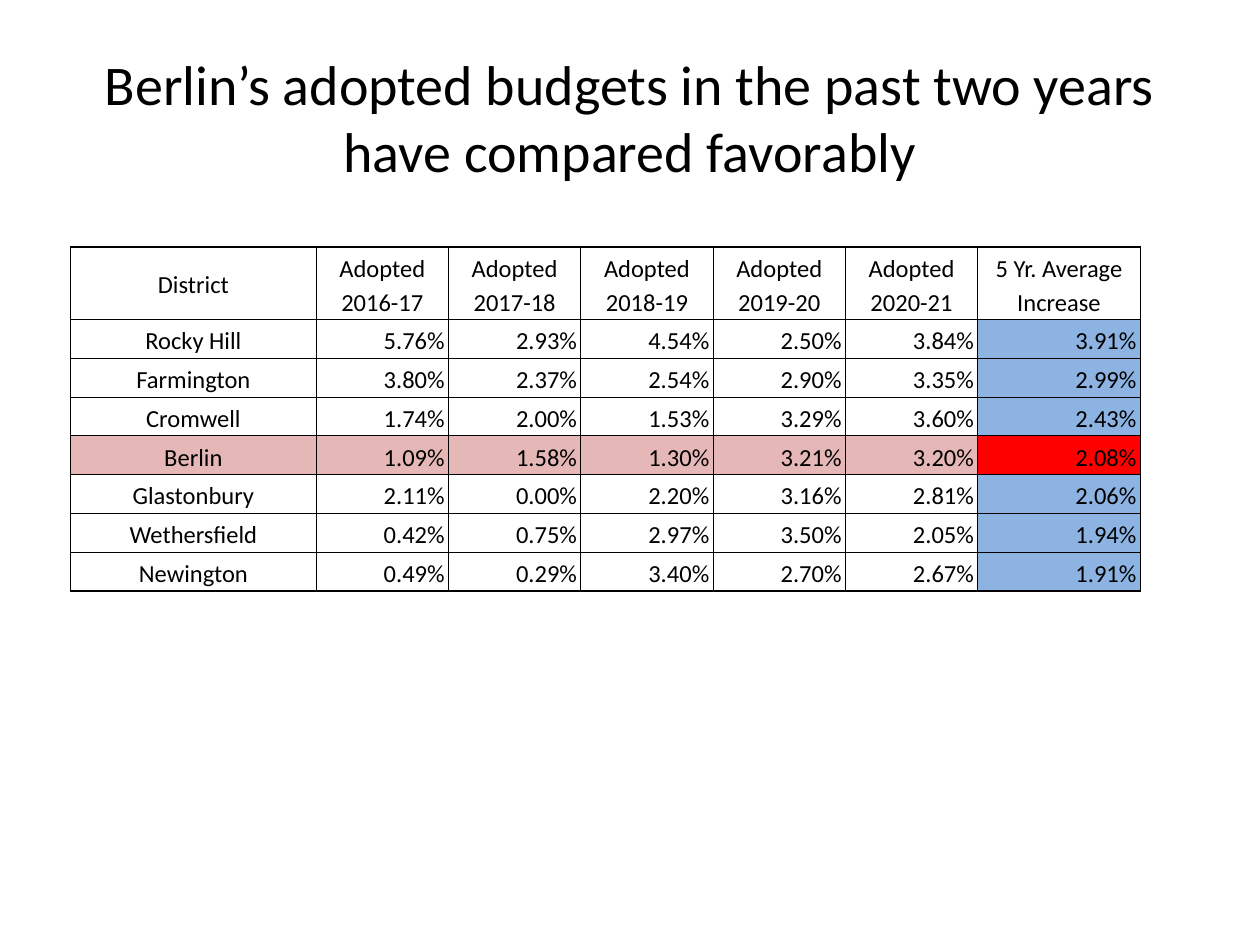
from dataclasses import dataclass
from typing import NamedTuple

from lxml.etree import SubElement
from pptx import Presentation
from pptx.dml.color import RGBColor
from pptx.enum.text import MSO_ANCHOR as Anchor, PP_ALIGN as Align
from pptx.oxml.ns import qn
from pptx.util import Inches, Pt


@dataclass(frozen=True)
class Theme:
    font: str = "Calibri"
    title_size: int = 32
    table_size: int = 14
    line_spacing: float = 1.15
    border_width: float = 0.75
    ink: str = "000000"
    average: str = "8DB3E2"
    highlight: str = "E5B8B7"
    highlight_average: str = "FF0000"


class District(NamedTuple):
    name: str
    increases: tuple[float, ...]
    average: float


THEME = Theme()
SLIDE_WIDTH, SLIDE_HEIGHT = Inches(10), Inches(7.5)
TITLE = "Berlin’s adopted budgets in the past two years have compared favorably"
YEARS = ("2016-17", "2017-18", "2018-19", "2019-20", "2020-21")
HEADERS = ("District", *(f"Adopted {year}" for year in YEARS), "5 Yr. Average Increase")
HIGHLIGHTED = "Berlin"
DISTRICTS = (
    District("Rocky Hill", (5.76, 2.93, 4.54, 2.50, 3.84), 3.91),
    District("Farmington", (3.80, 2.37, 2.54, 2.90, 3.35), 2.99),
    District("Cromwell", (1.74, 2.00, 1.53, 3.29, 3.60), 2.43),
    District("Berlin", (1.09, 1.58, 1.30, 3.21, 3.20), 2.08),
    District("Glastonbury", (2.11, 0.00, 2.20, 3.16, 2.81), 2.06),
    District("Wethersfield", (0.42, 0.75, 2.97, 3.50, 2.05), 1.94),
    District("Newington", (0.49, 0.29, 3.40, 2.70, 2.67), 1.91),
)
COLUMN_WIDTHS = (1.95, *(1.05 for _ in YEARS), 1.29)
ROW_HEIGHTS = (0.56, *(0.22 for _ in DISTRICTS))


def write(text_frame, text: str, size: int, align: Align) -> None:
    paragraph = text_frame.paragraphs[0]
    paragraph.alignment = align
    run = paragraph.add_run()
    run.text = text
    run.font.name = THEME.font
    run.font.size = Pt(size)
    run.font.color.rgb = RGBColor.from_string(THEME.ink)


def add_borders(cell) -> None:
    properties = cell._tc.get_or_add_tcPr()
    for side in ("lnL", "lnR", "lnT", "lnB"):
        line = SubElement(properties, qn(f"a:{side}"), w=str(Pt(THEME.border_width)))
        fill = SubElement(line, qn("a:solidFill"))
        SubElement(fill, qn("a:srgbClr"), val=THEME.ink)


def fill_cell(cell, text: str, align: Align, color: str | None = None) -> None:
    cell.margin_left = cell.margin_right = Inches(0.03)
    cell.margin_top = cell.margin_bottom = Inches(0.02)
    cell.vertical_anchor = Anchor.MIDDLE
    write(cell.text_frame, text, THEME.table_size, align)
    cell.text_frame.paragraphs[0].line_spacing = THEME.line_spacing
    add_borders(cell)
    if color:
        cell.fill.solid()
        cell.fill.fore_color.rgb = RGBColor.from_string(color)
    else:
        cell.fill.background()


def add_title(slide) -> None:
    margin = int(SLIDE_WIDTH * 0.05)
    box = slide.shapes.add_textbox(
        margin, int(SLIDE_HEIGHT * 0.04), SLIDE_WIDTH - 2 * margin, Inches(1.25)
    )
    box.text_frame.word_wrap = True
    box.text_frame.vertical_anchor = Anchor.MIDDLE
    write(box.text_frame, TITLE, THEME.title_size, Align.CENTER)


def add_budget_table(slide) -> None:
    table = slide.shapes.add_table(
        len(ROW_HEIGHTS), len(COLUMN_WIDTHS), Inches(0.56), Inches(1.96),
        Inches(sum(COLUMN_WIDTHS)), Inches(sum(ROW_HEIGHTS)),
    ).table
    table.first_row = table.horz_banding = False
    for column, width in zip(table.columns, COLUMN_WIDTHS):
        column.width = Inches(width)
    for row, height in zip(table.rows, ROW_HEIGHTS):
        row.height = Inches(height)

    for column, header in enumerate(HEADERS):
        fill_cell(table.cell(0, column), header, Align.CENTER)
    for row, district in enumerate(DISTRICTS, start=1):
        highlighted = district.name == HIGHLIGHTED
        color = THEME.highlight if highlighted else None
        average_color = THEME.highlight_average if highlighted else THEME.average
        fill_cell(table.cell(row, 0), district.name, Align.CENTER, color)
        for column, increase in enumerate(district.increases, start=1):
            fill_cell(table.cell(row, column), f"{increase:.2f}%", Align.RIGHT, color)
        fill_cell(table.cell(row, len(HEADERS) - 1), f"{district.average:.2f}%",
                  Align.RIGHT, average_color)


def main() -> None:
    presentation = Presentation()
    presentation.slide_width, presentation.slide_height = SLIDE_WIDTH, SLIDE_HEIGHT
    slide = presentation.slides.add_slide(presentation.slide_layouts[6])
    add_title(slide)
    add_budget_table(slide)
    presentation.save("out.pptx")


if __name__ == "__main__":
    main()
